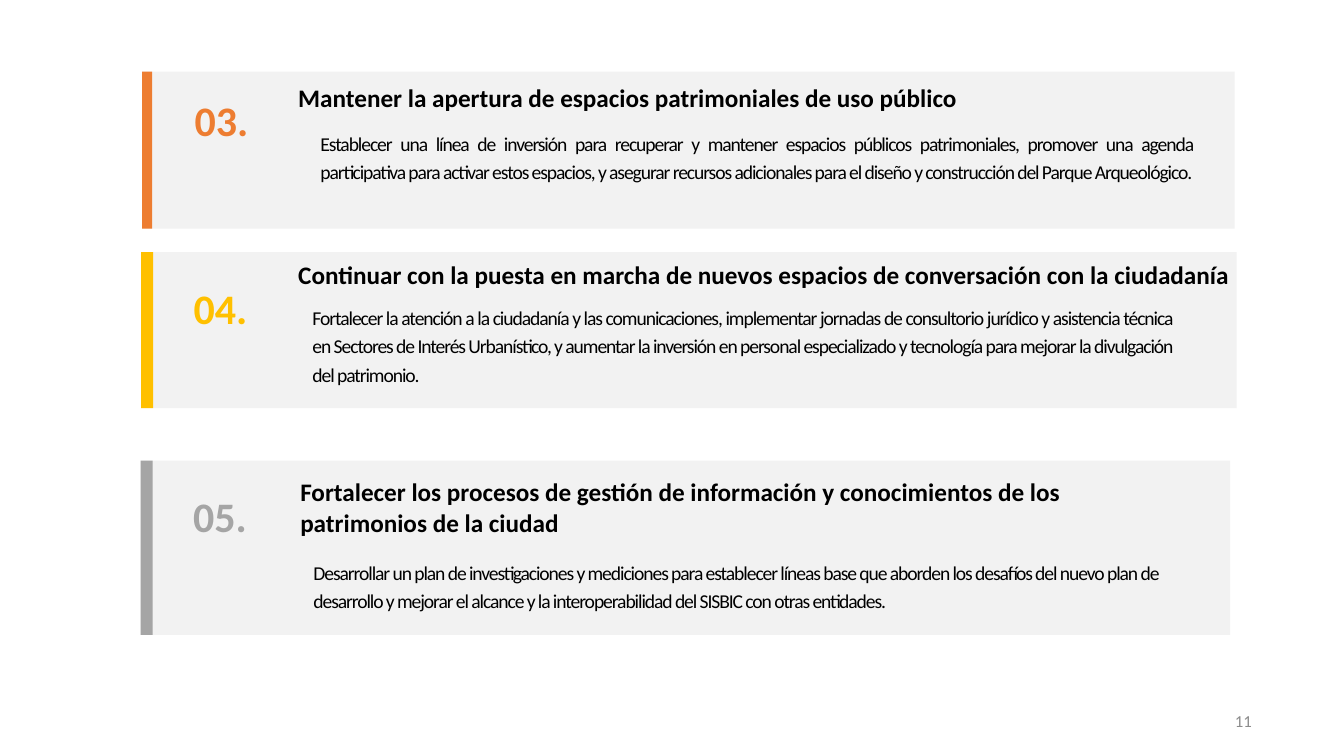
import pptx
import pptx.dml.color
import pptx.enum.shapes
import pptx.enum.text
import pptx.util

Pt = pptx.util.Pt
ANCHOR = pptx.enum.text.MSO_ANCHOR
ALIGN = pptx.enum.text.PP_ALIGN
AUTO = pptx.enum.text.MSO_AUTO_SIZE

COLORS = {
    "panel": "F2F2F2",
    "text": "000000",
    "page": "8C8C8C",
    "orange": "ED7D31",
    "yellow": "FFC000",
    "gray": "A5A5A5",
}
FONT = "Calibri"

# box: left, top, width, height on the slide; head and body: the same, from the card's corner
CARDS = [
    dict(
        box=(101.5, 51.1, 780.5, 112.3), color="orange", bar=7.2,
        number="03.", number_top=12.2,
        title="Mantener la apertura de espacios patrimoniales de uso público",
        head=(104.4, 4.3, 488.9, 28.8), head_wrap=False,
        text="Establecer una línea de inversión para recuperar y mantener espacios públicos "
             "patrimoniales, promover una agenda participativa para activar estos espacios, y "
             "asegurar recursos adicionales para el diseño y construcción del Parque Arqueológico.",
        body=(123.8, 37.4, 630.7, 64.8), align=ALIGN.JUSTIFY,
    ),
    dict(
        box=(100.8, 180, 782.6, 111.6), color="yellow", bar=8.6,
        number="04.", number_top=18,
        title="Continuar con la puesta en marcha de nuevos espacios de conversación con la ciudadanía",
        head=(105.1, 1.4, 684.7, 28.8), head_wrap=False,
        text="Fortalecer la atención a la ciudadanía y las comunicaciones, implementar jornadas de "
             "consultorio jurídico y asistencia técnica en Sectores de Interés Urbanístico, y "
             "aumentar la inversión en personal especializado y tecnología para mejorar la "
             "divulgación del patrimonio.",
        body=(118.8, 33.1, 621.4, 64.8), align=ALIGN.JUSTIFY,
    ),
    dict(
        box=(100.4, 329, 778.3, 124.6), color="gray", bar=8.6,
        number="05.", number_top=17.3,
        title="Fortalecer los procesos de gestión de información y conocimientos de los "
              "patrimonios de la ciudad",
        head=(107, 7.2, 645.8, 51.1), head_wrap=True,
        text="Desarrollar un plan de investigaciones y mediciones para establecer líneas base que "
             "aborden los desafíos del nuevo plan de desarrollo y mejorar el alcance y la "
             "interoperabilidad del SISBIC con otras entidades.",
        body=(119.9, 66.2, 619.2, 44.6), align=ALIGN.LEFT,
    ),
]


def rgb(name):
    return pptx.dml.color.RGBColor.from_string(COLORS[name])


def add_rect(slide, box, color):
    sp = slide.shapes.add_shape(pptx.enum.shapes.MSO_SHAPE.RECTANGLE, *map(Pt, box))
    sp.shadow.inherit = False
    sp.fill.solid()
    sp.fill.fore_color.rgb = rgb(color)
    sp.line.fill.background()


def add_text(slide, box, text, size, color="text", bold=False, align=ALIGN.LEFT,
             anchor=ANCHOR.TOP, insets=(7.2, 3.6), wrap=True, spacing=None,
             tracking=None, auto_size=AUTO.SHAPE_TO_FIT_TEXT):
    """Insets are (horizontal, vertical); tracking is in points."""
    tf = slide.shapes.add_textbox(*map(Pt, box)).text_frame
    tf.word_wrap = wrap
    tf.auto_size = auto_size
    tf.vertical_anchor = anchor
    tf.margin_left = tf.margin_right = Pt(insets[0])
    tf.margin_top = tf.margin_bottom = Pt(insets[1])
    p = tf.paragraphs[0]
    p.alignment = align
    if spacing:
        p.line_spacing = spacing
    r = p.add_run()
    r.text = text
    r.font.name = FONT
    r.font.size = Pt(size)
    r.font.bold = bold
    r.font.color.rgb = rgb(color)
    if tracking:
        r.font._element.set("spc", str(round(tracking * 100)))


def add_card(slide, card):
    left, top, width, height = card["box"]

    def inside(box):
        dx, dy, w, h = box
        return left + dx, top + dy, w, h

    add_rect(slide, card["box"], "panel")
    add_rect(slide, (left, top, card["bar"], height), card["color"])
    add_text(slide, inside(card["head"]), card["title"], 18, bold=True,
             anchor=ANCHOR.BOTTOM, wrap=card["head_wrap"])
    add_text(slide, inside(card["body"]), card["text"], 14, align=card["align"],
             insets=(3.6, 2.2), spacing=1.2, tracking=-0.8)
    add_text(slide, inside((20.8, card["number_top"], 72, 43.9)), card["number"], 30,
             color=card["color"], bold=True, align=ALIGN.CENTER, anchor=ANCHOR.MIDDLE)


def add_page_number(slide, box, number):
    add_text(slide, box, number, 12, color="page", align=ALIGN.RIGHT,
             anchor=ANCHOR.MIDDLE, insets=(0, 0), auto_size=AUTO.NONE)


def main():
    prs = pptx.Presentation()
    prs.slide_width, prs.slide_height = Pt(960), Pt(540)
    slide = prs.slides.add_slide(prs.slide_layouts[6])
    for card in CARDS:
        add_card(slide, card)
    add_page_number(slide, (678.2, 500.4, 216, 28.8), "11")
    prs.save("out.pptx")


if __name__ == "__main__":
    main()
